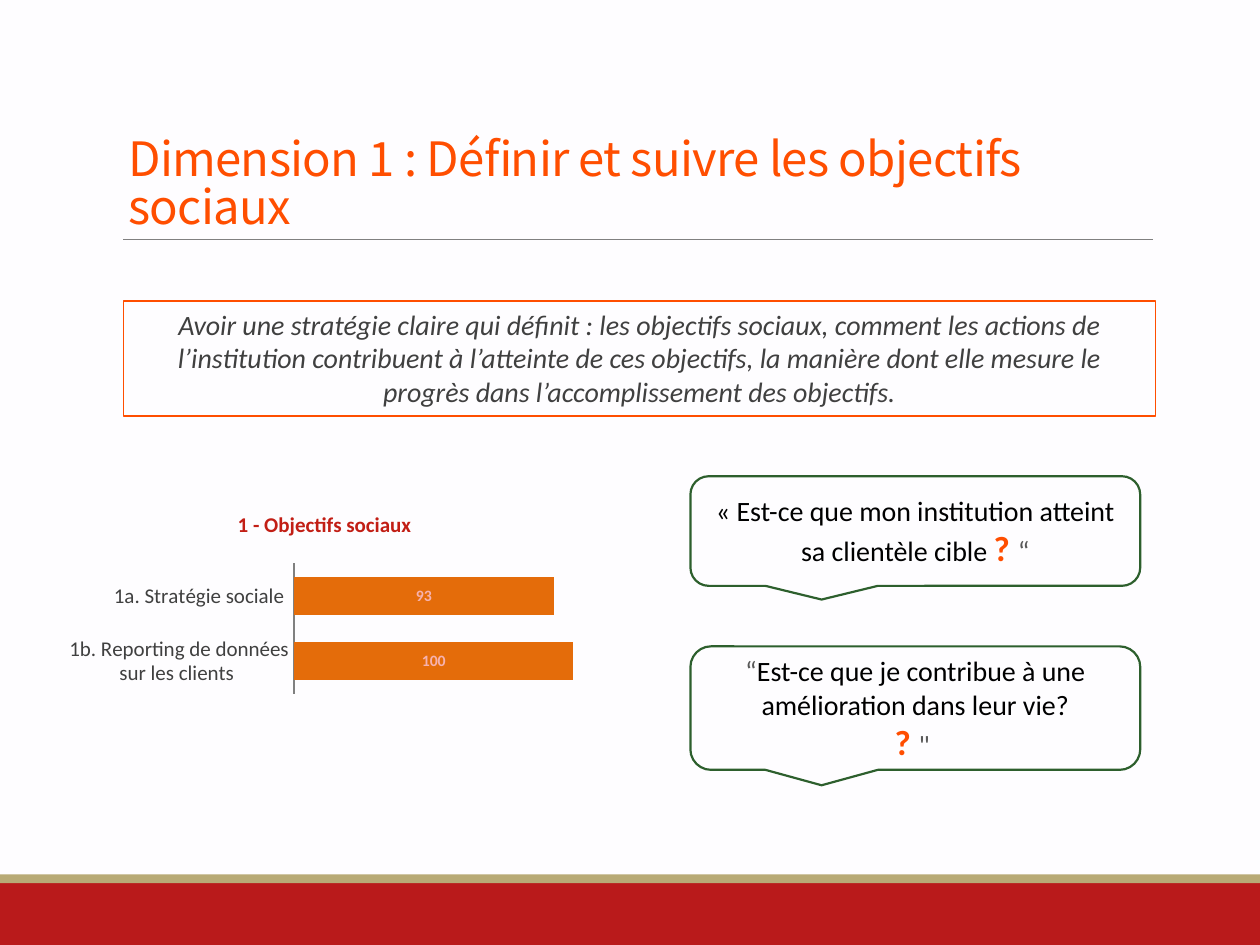
from dataclasses import dataclass
from typing import Any

from lxml import etree
from pptx import Presentation
from pptx import util as u
from pptx.chart import data as chart_data
from pptx.dml.color import RGBColor
from pptx.enum import chart as ch, shapes, text
from pptx.oxml import parse_xml
from pptx.oxml.ns import nsdecls, qn

COLORS = {
    "background": "FEFDFF", "red": "B91A1B", "sand": "B8AA76", "rule": "808080",
    "orange": "FF4E00", "body": "404040", "black": "000000", "quote": "595959",
    "green": "2D5F2D", "bar": "E46C0A", "value": "F6B2AF", "heading": "C21E15",
}


def rgb(name):
    return RGBColor.from_string(COLORS[name])


def inches(*lengths):
    return [u.Inches(length) for length in lengths]


@dataclass
class SlideBuilder:
    """Draws styled elements on the current slide."""

    slide: Any
    font: str = "Calibri"
    title_font: str = "Noto Sans CJK KR"

    def style(self, font, size, color, bold=False, italic=False, name=None):
        font.name, font.size = name or self.font, u.Pt(size)
        font.bold, font.italic = bold, italic
        font.color.rgb = rgb(color)

    def shape(self, kind, box, fill=None, line=None, width=1):
        shape = self.slide.shapes.add_shape(kind, *inches(*box))
        shape.shadow.inherit = False
        if fill:
            shape.fill.solid()
            shape.fill.fore_color.rgb = rgb(fill)
        else:
            shape.fill.background()
        if line:
            shape.line.color.rgb = rgb(line)
            shape.line.width = u.Pt(width)
        else:
            shape.line.fill.background()
        return shape

    def band(self, box, fill):
        self.shape(shapes.MSO_SHAPE.RECTANGLE, box, fill)

    def rule(self, left, right, top):
        rule = self.slide.shapes.add_connector(
            shapes.MSO_CONNECTOR.STRAIGHT, *inches(left, top, right, top))
        rule.line.color.rgb = rgb("rule")
        rule.line.width = u.Pt(0.5)
        etree.SubElement(rule.element.spPr, qn("a:effectLst"))

    def title(self, box, wording):
        frame = self.slide.shapes.add_textbox(*inches(*box)).text_frame
        frame.word_wrap = True
        frame.vertical_anchor = text.MSO_ANCHOR.BOTTOM
        frame.text = wording
        paragraph = frame.paragraphs[0]
        paragraph.line_spacing = 0.85
        run = paragraph.runs[0]
        self.style(run.font, 27, "orange", name=self.title_font)
        run.font._element.set("spc", "-40")

    def definition(self, box, wording):
        panel = self.shape(shapes.MSO_SHAPE.RECTANGLE, box, line="orange")
        frame = panel.text_frame
        frame.word_wrap = True
        frame.vertical_anchor = text.MSO_ANCHOR.TOP
        frame.text = wording
        paragraph = frame.paragraphs[0]
        paragraph.alignment = text.PP_ALIGN.CENTER
        self.style(paragraph.runs[0].font, 16, "body", italic=True)

    def callout(self, box, paragraphs):
        bubble = self.shape(shapes.MSO_SHAPE.ROUNDED_RECTANGULAR_CALLOUT, box,
                            "background", "green", 1.25)
        frame = bubble.text_frame
        frame.word_wrap = True
        frame.vertical_anchor = text.MSO_ANCHOR.MIDDLE
        for index, pieces in enumerate(paragraphs):
            paragraph = frame.add_paragraph() if index else frame.paragraphs[0]
            paragraph.alignment = text.PP_ALIGN.CENTER
            for wording, size, color, bold in pieces:
                run = paragraph.add_run()
                run.text = wording
                self.style(run.font, size, color, bold)

    def bar_chart(self, box, heading, scores, plot):
        data = chart_data.CategoryChartData()
        data.categories = list(scores)
        data.add_series("Series 1", scores.values())
        chart = self.slide.shapes.add_chart(
            ch.XL_CHART_TYPE.BAR_CLUSTERED, *inches(*box), data).chart
        self.style(chart.font, 10, "black")
        chart.has_legend = False
        chart.has_title = True
        chart.chart_title.include_in_layout = False
        chart.chart_title.text_frame.text = heading
        heading_run = chart.chart_title.text_frame.paragraphs[0].runs[0]
        self.style(heading_run.font, 12, "heading", bold=True)

        categories = chart.category_axis
        categories.reverse_order = True
        categories.major_tick_mark = ch.XL_TICK_MARK.NONE
        categories.format.line.color.rgb = rgb("rule")
        self.style(categories.tick_labels.font, 12, "body")
        values = chart.value_axis
        values.minimum_scale, values.maximum_scale, values.major_unit = 0, 100, 20
        values.has_major_gridlines = False
        values.visible = False

        bars = chart.plots[0]
        bars.gap_width = 70
        bars.vary_by_categories = False
        series = bars.series[0]
        series.format.fill.solid()
        series.format.fill.fore_color.rgb = rgb("bar")
        labels = series.data_labels
        labels.show_value = True
        labels.position = ch.XL_LABEL_POSITION.CENTER
        labels.number_format, labels.number_format_is_linked = "0", False
        self.style(labels.font, 9, "value", bold=True)
        self.place_plot(chart, plot)

    def place_plot(self, chart, plot):
        modes = '<c:layoutTarget val="inner"/><c:xMode val="edge"/><c:yMode val="edge"/>'
        sizes = "".join(f'<c:{key} val="{part}"/>' for key, part in zip("xywh", plot))
        area = chart._chartSpace.chart.plotArea
        for layout in area.findall(qn("c:layout")):
            area.remove(layout)
        area.insert(0, parse_xml(
            f'<c:layout {nsdecls("c")}><c:manualLayout>{modes}{sizes}'
            '</c:manualLayout></c:layout>'))


def main():
    deck = Presentation()
    deck.slide_width, deck.slide_height = inches(10, 7.5)
    slide = deck.slides.add_slide(deck.slide_layouts[6])
    slide.background.fill.solid()
    slide.background.fill.fore_color.rgb = rgb("background")
    builder = SlideBuilder(slide)

    builder.band((0, 7, 10, 0.5), "red")
    builder.band((0, 6.94, 10, 0.07), "sand")
    builder.rule(0.98, 9.15, 1.9)
    builder.title((0.92, 1.15, 8.25, 0.76),
                  "Dimension 1 : Définir et suivre les objectifs sociaux")
    builder.definition(
        (0.98, 2.39, 8.19, 0.91),
        "Avoir une stratégie claire qui définit : les objectifs sociaux, comment les "
        "actions de l’institution contribuent à l’atteinte de ces objectifs, la manière "
        "dont elle mesure le progrès dans l’accomplissement des objectifs.")

    question_mark = ("? ", 20, "orange", True)
    builder.callout((5.48, 3.78, 3.57, 0.87), [
        [("« Est-ce que mon institution atteint sa clientèle cible ", 16, "black", False),
         question_mark, ("“", 16, "quote", False)]])
    builder.callout((5.48, 5.13, 3.57, 0.98), [
        [("“", 16, "quote", False),
         ("Est-ce que je contribue à une amélioration dans leur vie?", 16, "black", False)],
        [question_mark, ('" ', 16, "quote", False)]])

    builder.bar_chart(
        (0.42, 3.91, 4.35, 2.96), "1 - Objectifs sociaux ",
        {"1a. Stratégie sociale ": 93, "1b. Reporting de données sur les clients ": 100},
        plot=(0.44, 0.19, 0.51, 0.35))
    deck.save("out.pptx")


if __name__ == "__main__":
    main()
